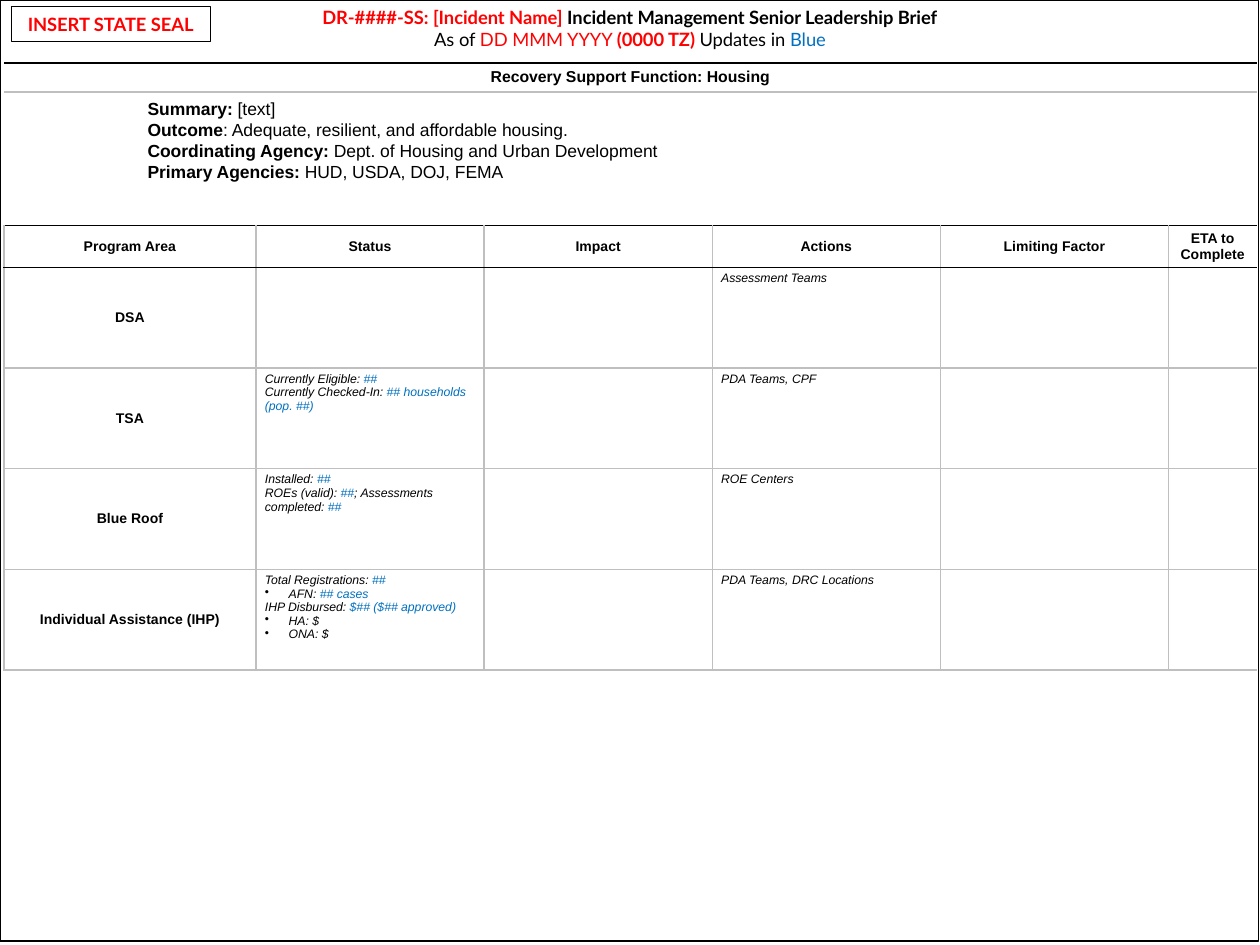
from lxml.etree import SubElement
from pptx import Presentation
from pptx.dml.color import RGBColor
from pptx.enum.shapes import MSO_SHAPE
from pptx.enum.text import MSO_ANCHOR, MSO_AUTO_SIZE, PP_ALIGN
from pptx.oxml.ns import qn
from pptx.util import Cm, Pt

COLORS = {"black": "000000", "red": "FF0000", "blue": "0070C0", "gray": "BFBFBF"}

# Runs are (text, color, style), where style may hold "b" and "i".
TITLE = [
    [("DR-####-SS: [Incident Name] ", "red", "b"),
     ("Incident Management Senior Leadership Brief", "black", "b")],
    [("As of ", "black", ""), ("DD MMM YYYY ", "red", ""), ("(0000 TZ) ", "red", "b"),
     ("Updates in ", "black", ""), ("Blue", "blue", "")],
]
SUMMARY = [
    ("Summary: ", "[text]"),
    ("Outcome", ": Adequate, resilient, and affordable housing."),
    ("Coordinating Agency: ", "Dept. of Housing and Urban Development"),
    ("Primary Agencies: ", "HUD, USDA, DOJ, FEMA"),
]
HEADS = ["Program Area", "Status", "Impact", "Actions", "Limiting Factor", "ETA to Complete"]
# Program, status lines (bullet, then black and blue text in turn), action.
PROGRAMS = [
    ("DSA", [], "Assessment Teams"),
    ("TSA", [("", "Currently Eligible: ", "##"),
             ("", "Currently Checked-In: ", "## households (pop. ##)")],
     "PDA Teams, CPF"),
    ("Blue Roof", [("", "Installed: ", "##"),
                   ("", "ROEs (valid): ", "##", "; Assessments completed: ", "##")],
     "ROE Centers"),
    ("Individual Assistance (IHP)",
     [("", "Total Registrations: ", "##"),
      ("•", "AFN: ", "## cases"),
      ("", "IHP Disbursed: ", "$## ($## approved)"),
      ("•", "HA: $"),
      ("•", "ONA: $")],
     "PDA Teams, DRC Locations"),
]


def rgb(name):
    return RGBColor.from_string(COLORS[name])


def set_bullet(par, mark, indent=0):
    props = par._p.get_or_add_pPr()
    props.set("marL", str(indent))
    props.set("indent", str(-indent))
    if mark:
        SubElement(props, qn("a:buChar"), char=mark)
    else:
        SubElement(props, qn("a:buNone"))


def add_runs(par, runs, size, face="Arial"):
    for text, color, style in runs:
        run = par.add_run()
        run.text = text
        font = run.font
        font.name, font.size = face, Pt(size)
        font.bold, font.italic = "b" in style, "i" in style
        font.color.rgb = rgb(color)


def add_lines(frame, count):
    """Yield count paragraphs, the first being the one already there."""
    for i in range(count):
        yield frame.add_paragraph() if i else frame.paragraphs[0]


def place(shape, left, top, width, height):
    shape.left, shape.top = Cm(left), Cm(top)
    shape.width, shape.height = Cm(width), Cm(height)
    frame = shape.text_frame
    frame.word_wrap = True
    frame.auto_size = MSO_AUTO_SIZE.NONE
    frame.vertical_anchor = MSO_ANCHOR.TOP
    return frame


def fill_title(shape):
    frame = place(shape, 0, 0, 25.4, 1.14)
    for par, runs in zip(add_lines(frame, len(TITLE)), TITLE):
        par.alignment = PP_ALIGN.CENTER
        add_runs(par, runs, 10.5, "Lato")


def fill_summary(shape):
    frame = place(shape, 2.72, 1.85, 21.46, 1.96)
    for par, (label, text) in zip(add_lines(frame, len(SUMMARY)), SUMMARY):
        set_bullet(par, "")
        par.space_before, par.line_spacing = Pt(0), Pt(12)
        add_runs(par, [(label, "black", "b"), (text, "black", "")], 10)


def add_box(slide, left, top, width, height, weight):
    box = slide.shapes.add_shape(MSO_SHAPE.RECTANGLE, Cm(left), Cm(top), Cm(width), Cm(height))
    box.shadow.inherit = False
    box.fill.background()
    box.line.color.rgb = rgb("black")
    box.line.width = Pt(weight)
    return box


def add_seal(slide):
    box = add_box(slide, 0.23, 0.13, 4.01, 0.71, 0.75)
    box.text_frame.vertical_anchor = MSO_ANCHOR.MIDDLE
    par = box.text_frame.paragraphs[0]
    par.alignment = PP_ALIGN.CENTER
    add_runs(par, [("INSERT STATE SEAL", "red", "b")], 10.5, "Lato")


def style_cell(cell, **edges):
    """Set margins, no fill, and a 1 pt line for each named edge (L, R, T, B)."""
    cell.margin_left = cell.margin_right = Cm(0.18)
    cell.margin_top = cell.margin_bottom = Cm(0.08)
    props = cell._tc.get_or_add_tcPr()
    for side in "LRTB":
        line = SubElement(props, qn("a:ln" + side), w=str(Pt(1)))
        if side in edges:
            paint = SubElement(line, qn("a:solidFill"))
            SubElement(paint, qn("a:srgbClr"), val=COLORS[edges[side]])
        else:
            SubElement(line, qn("a:noFill"))
    cell.fill.background()


def add_label(cell, text, size):
    cell.vertical_anchor = MSO_ANCHOR.MIDDLE
    par = cell.text_frame.paragraphs[0]
    par.alignment = PP_ALIGN.CENTER
    add_runs(par, [(text, "black", "b")], size)


def add_notes(cell, notes):
    for par, (mark, *parts) in zip(add_lines(cell.text_frame, len(notes)), notes):
        if mark:
            set_bullet(par, mark, Cm(0.48))
        runs = [(text, "blue" if i % 2 else "black", "i") for i, text in enumerate(parts)]
        add_runs(par, runs, 7)


def add_grid(slide, top, widths, heights):
    shape = slide.shapes.add_table(len(heights), len(widths), Cm(0.08), Cm(top),
                                   Cm(sum(widths)), Cm(sum(heights)))
    grid = shape.table
    grid.first_row = grid.horz_banding = False
    for col, width in zip(grid.columns, widths):
        col.width = Cm(width)
    for row, height in zip(grid.rows, heights):
        row.height = Cm(height)
    return grid


def add_banner(slide):
    cell = add_grid(slide, 1.27, [25.25], [0.58]).cell(0, 0)
    style_cell(cell, T="black", B="gray")
    add_label(cell, "Recovery Support Function: Housing", 9)


def add_status(slide):
    widths = [5.08] + [4.6] * 4 + [1.78]
    grid = add_grid(slide, 4.55, widths, [0.84] + [2.03] * len(PROGRAMS))
    for r, row in enumerate(grid.rows):
        for c, cell in enumerate(row.cells):
            edges = {"L": "gray", "T": "gray" if r > 1 else "black",
                     "B": "gray" if r else "black"}
            if c < len(widths) - 1:
                edges["R"] = "gray"
            style_cell(cell, **edges)
    for c, head in enumerate(HEADS):
        add_label(grid.cell(0, c), head, 8)
    for r, (name, status, action) in enumerate(PROGRAMS, 1):
        add_label(grid.cell(r, 0), name, 8)
        add_notes(grid.cell(r, 1), status)
        add_notes(grid.cell(r, 3), [("", action)])


def main():
    deck = Presentation()
    deck.slide_width, deck.slide_height = Cm(25.4), Cm(19.05)
    slide = deck.slides.add_slide(deck.slide_layouts[1])
    fill_title(slide.shapes.title)
    fill_summary(slide.placeholders[1])
    add_seal(slide)
    add_box(slide, 0, 0, 25.37, 18.97, 1)
    add_banner(slide)
    add_status(slide)
    deck.save("out.pptx")


if __name__ == "__main__":
    main()
